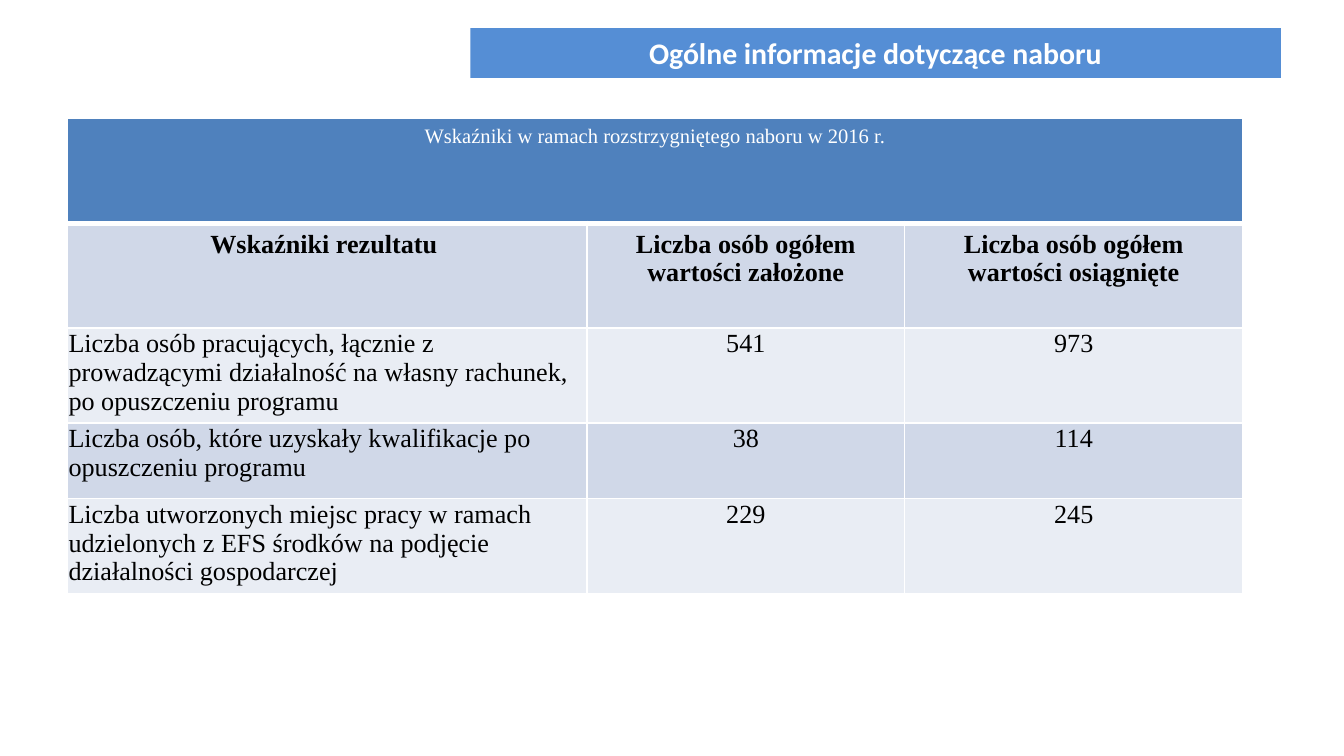
from lxml.etree import SubElement
from pptx import Presentation
from pptx.dml.color import RGBColor
from pptx.enum.text import MSO_ANCHOR, MSO_AUTO_SIZE, PP_ALIGN
from pptx.oxml.ns import qn
from pptx.util import Inches, Pt

WHITE = RGBColor(0xFF, 0xFF, 0xFF)
BLACK = RGBColor(0x00, 0x00, 0x00)
TITLE_BLUE = RGBColor(0x55, 0x8E, 0xD5)
HEADER_BLUE = RGBColor(0x4F, 0x81, 0xBD)
BAND_DARK = RGBColor(0xD0, 0xD8, 0xE8)
BAND_LIGHT = RGBColor(0xE9, 0xED, 0xF4)

COLUMNS = [3.87, 2.36, 2.52]
ROWS = [0.78, 0.78, 0.71, 0.56, 0.71]
INDICATORS = [
    ["Wskaźniki w ramach rozstrzygniętego naboru w 2016 r.", "", ""],
    ["Wskaźniki rezultatu ", "Liczba osób ogółem wartości założone",
     "Liczba osób ogółem wartości osiągnięte"],
    ["Liczba osób pracujących, łącznie z prowadzącymi działalność na własny "
     "rachunek, po opuszczeniu programu", "541", "973"],
    ["Liczba osób, które uzyskały kwalifikacje po opuszczeniu programu", "38", "114"],
    ["Liczba utworzonych miejsc pracy w ramach udzielonych z EFS środków na "
     "podjęcie działalności gospodarczej", "229", "245"],
]


def add_text(tf, text, font, size, color, bold, align):
    p = tf.paragraphs[0]
    p.alignment = align
    r = p.add_run()
    r.text = text
    r.font.name = font
    r.font.size = Pt(size)
    r.font.bold = bold
    r.font.color.rgb = color


def add_borders(cell, bottom):
    tc_pr = cell._tc.get_or_add_tcPr()
    for side, width in (("lnL", 1), ("lnR", 1), ("lnT", 1), ("lnB", bottom)):
        line = SubElement(tc_pr, qn(f"a:{side}"), w=str(Pt(width)))
        SubElement(SubElement(line, qn("a:solidFill")), qn("a:srgbClr"), val=str(WHITE))


prs = Presentation()
prs.slide_width = Inches(10)
prs.slide_height = prs.slide_width * 9 // 16
s = prs.slides.add_slide(prs.slide_layouts[5])

title = s.shapes.title
title.left, title.top = Inches(3.5), Inches(0.21)
title.width, title.height = Inches(6.03), Inches(0.37)
title.fill.solid()
title.fill.fore_color.rgb = TITLE_BLUE
tf = title.text_frame
tf.word_wrap = True
tf.auto_size = MSO_AUTO_SIZE.NONE
tf.vertical_anchor = MSO_ANCHOR.MIDDLE
add_text(tf, "Ogólne informacje dotyczące naboru", "Calibri", 16, WHITE, True, PP_ALIGN.CENTER)

table = s.shapes.add_table(len(ROWS), len(COLUMNS), Inches(0.5), Inches(0.88),
                           Inches(sum(COLUMNS)), Inches(sum(ROWS))).table
for column, width in zip(table.columns, COLUMNS):
    column.width = Inches(width)
for row, height in zip(table.rows, ROWS):
    row.height = Inches(height)
table.cell(0, 0).merge(table.cell(0, len(COLUMNS) - 1))

for i, texts in enumerate(INDICATORS):
    for j, text in enumerate(texts):
        cell = table.cell(i, j)
        add_borders(cell, 3 if i == 0 else 1)
        cell.fill.solid()
        cell.fill.fore_color.rgb = HEADER_BLUE if i == 0 else BAND_DARK if i % 2 else BAND_LIGHT
        if i > 1:
            cell.margin_left = cell.margin_right = cell.margin_top = Inches(0.01)
            cell.margin_bottom = 0
        if text:
            add_text(cell.text_frame, text, "Times New Roman", 11 if i == 0 else 14,
                     WHITE if i == 0 else BLACK, i == 1,
                     PP_ALIGN.LEFT if i > 1 and j == 0 else PP_ALIGN.CENTER)

prs.save("out.pptx")
